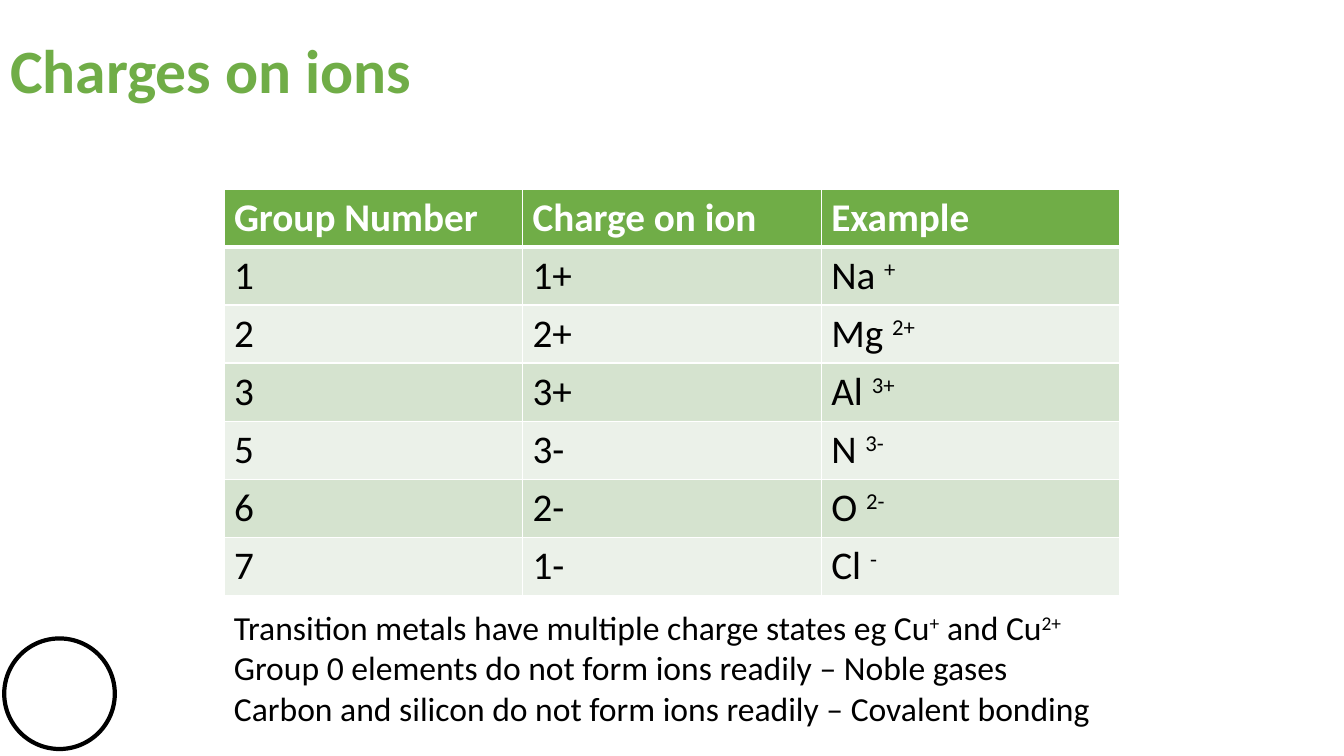
import pptx
import pptx.dml.color
import pptx.enum.shapes
import pptx.enum.text
import pptx.oxml
import pptx.oxml.ns
import pptx.util
import lxml.etree

Pt = pptx.util.Pt
GREEN, BLACK, WHITE = "70AD47", "000000", "FFFFFF"
BANDS = ["D5E3CF", "EBF1E9"]
IONS = [
    ("Group Number", "Charge on ion", "Example"),
    ("1", "1+", "Na ^+"),
    ("2", "2+", "Mg ^2+"),
    ("3", "3+", "Al ^3+"),
    ("5", "3-", "N ^3-"),
    ("6", "2-", "O ^2-"),
    ("7", "1-", "Cl ^-"),
]
NOTES = [
    "Transition metals have multiple charge states eg Cu^+^ and Cu^2+",
    "Group 0 elements do not form ions readily – Noble gases",
    "Carbon and silicon do not form ions readily – Covalent bonding",
]


def rgb(value):
    return pptx.dml.color.RGBColor.from_string(value)


class SlideBuilder:
    font = "Calibri"

    def __init__(self, slide):
        self.s = slide

    def add_runs(self, p, text, size, color, bold=False):
        for i, part in enumerate(text.split("^")):
            r = p.add_run()
            r.text = part
            for key, value in {"name": self.font, "size": Pt(size), "bold": bold}.items():
                setattr(r.font, key, value)
            r.font.color.rgb = rgb(color)
            if i % 2:
                r.font._element.set("baseline", "30000")

    def title(self, text, box, size, color):
        sp = self.s.shapes.title
        for key, value in zip(("left", "top", "width", "height"), box):
            setattr(sp, key, Pt(value))
        tf = sp.text_frame
        tf.vertical_anchor = pptx.enum.text.MSO_ANCHOR.MIDDLE
        p = tf.paragraphs[0]
        p.alignment = pptx.enum.text.PP_ALIGN.LEFT
        p.line_spacing = 0.9
        self.add_runs(p, text, size, color, True)

    def circle(self, box, width):
        kind = pptx.enum.shapes.MSO_SHAPE.OVAL
        sp = self.s.shapes.add_shape(kind, *map(Pt, box))
        sp.shadow.inherit = False
        sp.fill.solid()
        sp.fill.fore_color.rgb = rgb(WHITE)
        sp.line.color.rgb = rgb(BLACK)
        sp.line.width = Pt(width)

    def text(self, lines, box, size):
        tf = self.s.shapes.add_textbox(*map(Pt, box)).text_frame
        tf.word_wrap = True
        tf.auto_size = pptx.enum.text.MSO_AUTO_SIZE.SHAPE_TO_FIT_TEXT
        for i, line in enumerate(lines):
            p = tf.add_paragraph() if i else tf.paragraphs[0]
            self.add_runs(p, line, size, BLACK)

    def borders(self, cell, widths):
        tcPr = cell._tc.get_or_add_tcPr()
        for side, width in widths.items():
            ln = lxml.etree.SubElement(tcPr, pptx.oxml.ns.qn("a:" + side), w=str(Pt(width)))
            fill = lxml.etree.SubElement(ln, pptx.oxml.ns.qn("a:solidFill"))
            lxml.etree.SubElement(fill, pptx.oxml.ns.qn("a:srgbClr"), val=WHITE)

    def table(self, rows, box, size):
        frame = self.s.shapes.add_table(len(rows), len(rows[0]), *map(Pt, box))
        for i, row in enumerate(rows):
            for j, text in enumerate(row):
                cell = frame.table.cell(i, j)
                self.borders(cell, {"lnL": 1, "lnR": 1,
                                    "lnT": 3 if i == 1 else 1,
                                    "lnB": 3 if i == 0 else 1})
                cell.fill.solid()
                cell.fill.fore_color.rgb = rgb(BANDS[(i - 1) % 2] if i else GREEN)
                p = cell.text_frame.paragraphs[0]
                self.add_runs(p, text, size, BLACK if i else WHITE, i == 0)


def main():
    prs = pptx.Presentation()
    prs.slide_width, prs.slide_height = Pt(960), Pt(540)
    b = SlideBuilder(prs.slides.add_slide(prs.slide_layouts[5]))
    b.circle((3, 456, 79, 79), 3)
    b.title("Charges on ions", (0, 0, 894, 104.5), 44, GREEN)
    b.table(IONS, (160, 135, 640, 286), 28)
    b.text(NOTES, (160, 430, 650, 94.5), 24)
    prs.save("out.pptx")


if __name__ == "__main__":
    main()
